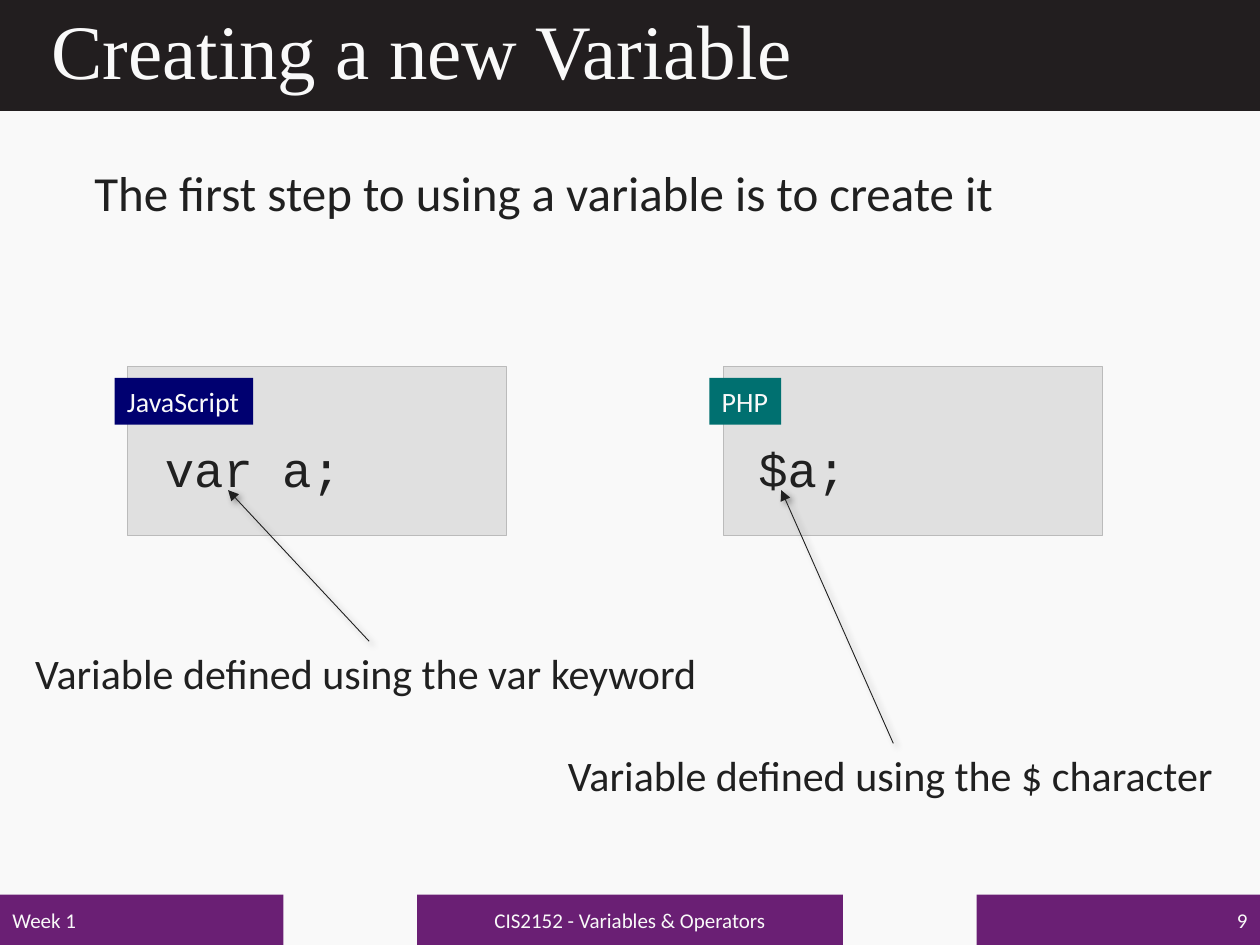
from lxml import etree
from pptx import Presentation
from pptx.dml.color import RGBColor
from pptx.enum.shapes import MSO_CONNECTOR, MSO_SHAPE
from pptx.enum.text import MSO_ANCHOR, MSO_AUTO_SIZE, PP_ALIGN
from pptx.oxml.ns import qn
from pptx.util import Inches, Pt

RECT = MSO_SHAPE.RECTANGLE
LINE = MSO_CONNECTOR.STRAIGHT
TOP, MIDDLE = MSO_ANCHOR.TOP, MSO_ANCHOR.MIDDLE
LEFT, CENTER, RIGHT = PP_ALIGN.LEFT, PP_ALIGN.CENTER, PP_ALIGN.RIGHT
FIT, FIXED = MSO_AUTO_SIZE.SHAPE_TO_FIT_TEXT, MSO_AUTO_SIZE.NONE

PAPER, INK, BLACK = "F9F9F9", "202020", "221E1F"
PURPLE, GRAY, EDGE = "6A1F74", "E0E0E0", "BBBBBB"
NAVY, TEAL = "000070", "007070"
BODY, CODE, SERIF = "Calibri", "Courier New", "Times New Roman"


def rgb(code):
    return RGBColor.from_string(code)


class Page:
    """The current slide and its style."""

    def __init__(self, deck):
        self.slide = deck.slides.add_slide(deck.slide_layouts[5])
        self.shapes = self.slide.shapes
        back = self.slide.background.fill
        back.solid()
        back.fore_color.rgb = rgb(PAPER)

    def label(self, shape, text, size, color, font=BODY, align=LEFT,
              anchor=TOP, wrap=False, fit=FIT):
        frame = shape.text_frame
        frame.word_wrap = wrap
        frame.auto_size = fit
        frame.vertical_anchor = anchor
        para = frame.paragraphs[0]
        para.alignment = align
        run = para.add_run()
        run.text = text
        run.font.size = Pt(size)
        run.font.name = font
        run.font.color.rgb = rgb(color)
        return para

    def title(self, text, x, y, w, h):
        shape = self.shapes.title
        shape.left, shape.top = Inches(x), Inches(y)
        shape.width, shape.height = Inches(w), Inches(h)
        para = self.label(shape, text, 44, PAPER, SERIF, anchor=MIDDLE,
                          wrap=True, fit=FIXED)
        para.line_spacing = 0.9

    def box(self, x, y, w, h, fill, edge=None):
        shape = self.shapes.add_shape(
            RECT, Inches(x), Inches(y), Inches(w), Inches(h))
        shape.shadow.inherit = False
        shape.fill.solid()
        shape.fill.fore_color.rgb = rgb(fill)
        if edge:
            shape.line.color.rgb = rgb(edge)
            shape.line.width = Pt(0.5)
        else:
            shape.line.fill.background()
        return shape

    def text(self, text, x, y, w, h, size, font=BODY):
        shape = self.shapes.add_textbox(
            Inches(x), Inches(y), Inches(w), Inches(h))
        self.label(shape, text, size, INK, font)

    def arrow(self, x1, y1, x2, y2):
        link = self.shapes.add_connector(
            LINE, Inches(x1), Inches(y1), Inches(x2), Inches(y2))
        link.line.color.rgb = rgb(INK)
        link.line.width = Pt(0.5)
        props = link.element.spPr
        etree.SubElement(props.find(qn("a:ln")), qn("a:tailEnd"),
                         type="triangle")
        # Soft shadow
        group = etree.SubElement(props, qn("a:effectLst"))
        shade = etree.SubElement(
            group, qn("a:outerShdw"), blurRad=str(Pt(4)), dist=str(Pt(3)),
            dir=str(45 * 60000), algn="tl", rotWithShape="0")
        tone = etree.SubElement(shade, qn("a:srgbClr"), val="000000")
        etree.SubElement(tone, qn("a:alpha"), val="40000")


def main():
    deck = Presentation()
    deck.slide_width, deck.slide_height = Inches(10), Inches(7.5)
    page = Page(deck)

    # Title on its dark bar
    bar = page.box(0, 0, 10, 0.88, BLACK)
    page.shapes.title.element.addprevious(bar.element)
    page.title("Creating a new Variable", 0.31, 0, 9.39, 0.86)

    # Footer
    for x, w, text, align in (
            (0, 2.25, "Week 1", LEFT),
            (3.31, 3.38, "CIS2152 - Variables & Operators", CENTER),
            (7.75, 2.25, "9", RIGHT)):
        foot = page.box(x, 7.1, w, 0.4, PURPLE)
        page.label(foot, text, 12, PAPER, align=align, anchor=MIDDLE,
                   wrap=True, fit=FIXED)

    # Notes below the code
    page.text("Variable defined using the var keyword",
              0.18, 5.09, 5.51, 0.5, 24)
    page.text("Variable defined using the $ character",
              4.41, 5.9, 5.37, 0.5, 24)

    # Code panels with language tags
    for x, code, code_x, code_w, name, tag_x, tag_w, color in (
            (1.01, "var a;", 1.21, 1.61, "JavaScript", 0.91, 1.1, NAVY),
            (5.74, "$a;", 5.92, 0.91, "PHP", 5.63, 0.57, TEAL)):
        page.box(x, 2.91, 3.01, 1.34, GRAY, EDGE)
        page.text(code, code_x, 3.43, code_w, 0.57, 28, CODE)
        tag = page.box(tag_x, 3, tag_w, 0.37, color)
        page.label(tag, name, 16, PAPER)

    # Lead sentence
    page.text("The first step to using a variable is to create it",
              0.65, 1.24, 7.41, 0.57, 28)

    # Arrows from notes to code
    page.arrow(2.93, 5.09, 1.81, 3.89)
    page.arrow(7.09, 5.9, 6.2, 3.89)

    deck.save("out.pptx")


if __name__ == "__main__":
    main()
